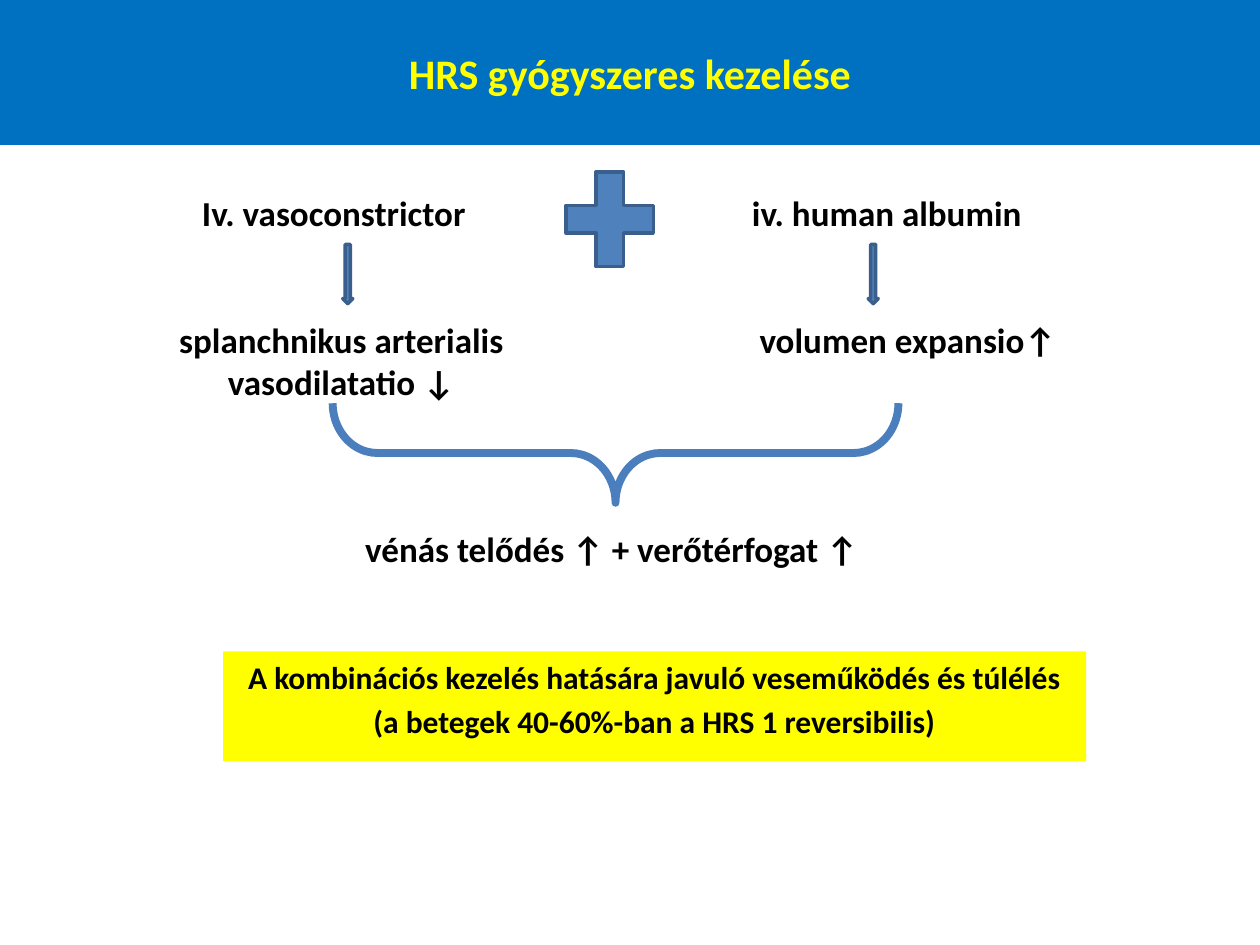
from pptx import Presentation
from pptx.dml.color import RGBColor
from pptx.enum.shapes import MSO_SHAPE
from pptx.enum.text import MSO_ANCHOR, PP_ALIGN
from pptx.util import Inches, Pt

RECTANGLE = MSO_SHAPE.RECTANGLE
DOWN_ARROW = MSO_SHAPE.DOWN_ARROW
PLUS = MSO_SHAPE.MATH_PLUS
LEFT_BRACE = MSO_SHAPE.LEFT_BRACE
LEFT, CENTER = PP_ALIGN.LEFT, PP_ALIGN.CENTER
TOP, MIDDLE = MSO_ANCHOR.TOP, MSO_ANCHOR.MIDDLE

FONT = "Calibri"
BLACK, YELLOW, TITLE_BLUE = "000000", "FFFF00", "0070C0"
SYMBOL_FILL, SYMBOL_LINE, BRACE_LINE = "4F81BD", "3A5F8C", "4B7EBC"


def color(value):
    return RGBColor.from_string(value)


def write_text(shape, text, size, font_color=BLACK, alignment=CENTER, anchor=TOP):
    frame = shape.text_frame
    frame.word_wrap = True
    frame.vertical_anchor = anchor
    frame.text = text
    for paragraph in frame.paragraphs:
        paragraph.alignment = alignment
        for run in paragraph.runs:
            run.font.name = FONT
            run.font.size = Pt(size)
            run.font.bold = True
            run.font.color.rgb = color(font_color)


def add_label(slide, box, text, alignment=CENTER):
    label = slide.shapes.add_textbox(*map(Inches, box))
    write_text(label, text, 20, alignment=alignment)


def add_figure(slide, kind, box, fill=None, line=None, line_width=2):
    shape = slide.shapes.add_shape(kind, *map(Inches, box))
    shape.shadow.inherit = False
    if fill:
        shape.fill.solid()
        shape.fill.fore_color.rgb = color(fill)
    else:
        shape.fill.background()
    if line:
        shape.line.color.rgb = color(line)
        shape.line.width = Pt(line_width)
    else:
        shape.line.fill.background()
    return shape


def add_title(slide, box):
    band = add_figure(slide, RECTANGLE, box, TITLE_BLUE)
    write_text(band, "HRS gyógyszeres kezelése", 24, YELLOW, anchor=MIDDLE)


def add_treatment(slide, box, treatment, effect, alignment, arrow_offset, treatment_shift, effect_shift):
    left, top, width, height = box
    add_label(slide, (left + treatment_shift, top, width, 0.44), treatment, alignment)
    add_figure(slide, DOWN_ARROW, (left + arrow_offset, top + 0.47, 0.08, 0.47), SYMBOL_FILL, SYMBOL_LINE)
    add_label(slide, (left + effect_shift, top + 1.01, width, height - 1.01), effect, alignment)


def add_brace(slide, box):
    left, top, width, height = box
    offset = (width - height) / 2
    brace = add_figure(slide, LEFT_BRACE, (left + offset, top - offset, height, width),
                       line=BRACE_LINE, line_width=4.5)
    brace.rotation = 270
    brace.adjustments[0] = 0.45


def add_conclusion(slide, box):
    panel = add_figure(slide, RECTANGLE, box, YELLOW)
    write_text(panel, "A kombinációs kezelés hatására javuló veseműködés és túlélés\n"
                      "(a betegek 40-60%-ban a HRS 1 reversibilis)", 18)
    panel.text_frame.paragraphs[1].space_before = Pt(3.6)


def main():
    presentation = Presentation()
    presentation.slide_width = Inches(10)
    presentation.slide_height = Inches(7.5)
    slide = presentation.slides.add_slide(presentation.slide_layouts[6])

    add_title(slide, (0, 0, 10, 1.15))
    add_conclusion(slide, (1.77, 5.17, 6.85, 0.87))
    add_treatment(slide, (0.98, 1.47, 3.46, 1.78), "Iv. vasoconstrictor",
                  "splanchnikus arterialis vasodilatatio ↓", CENTER, 1.74, -0.06, 0)
    add_treatment(slide, (5.87, 1.47, 2.64, 1.45), "iv. human albumin",
                  "volumen expansio↑", LEFT, 1.02, 0, 0.06)
    add_figure(slide, PLUS, (4.37, 1.23, 0.94, 1.02), SYMBOL_FILL, SYMBOL_LINE)
    add_label(slide, (2.8, 4.14, 4.16, 0.44), "vénás telődés ↑ + verőtérfogat ↑", LEFT)
    add_brace(slide, (2.64, 3.2, 4.49, 0.79))

    presentation.save("out.pptx")


if __name__ == "__main__":
    main()
